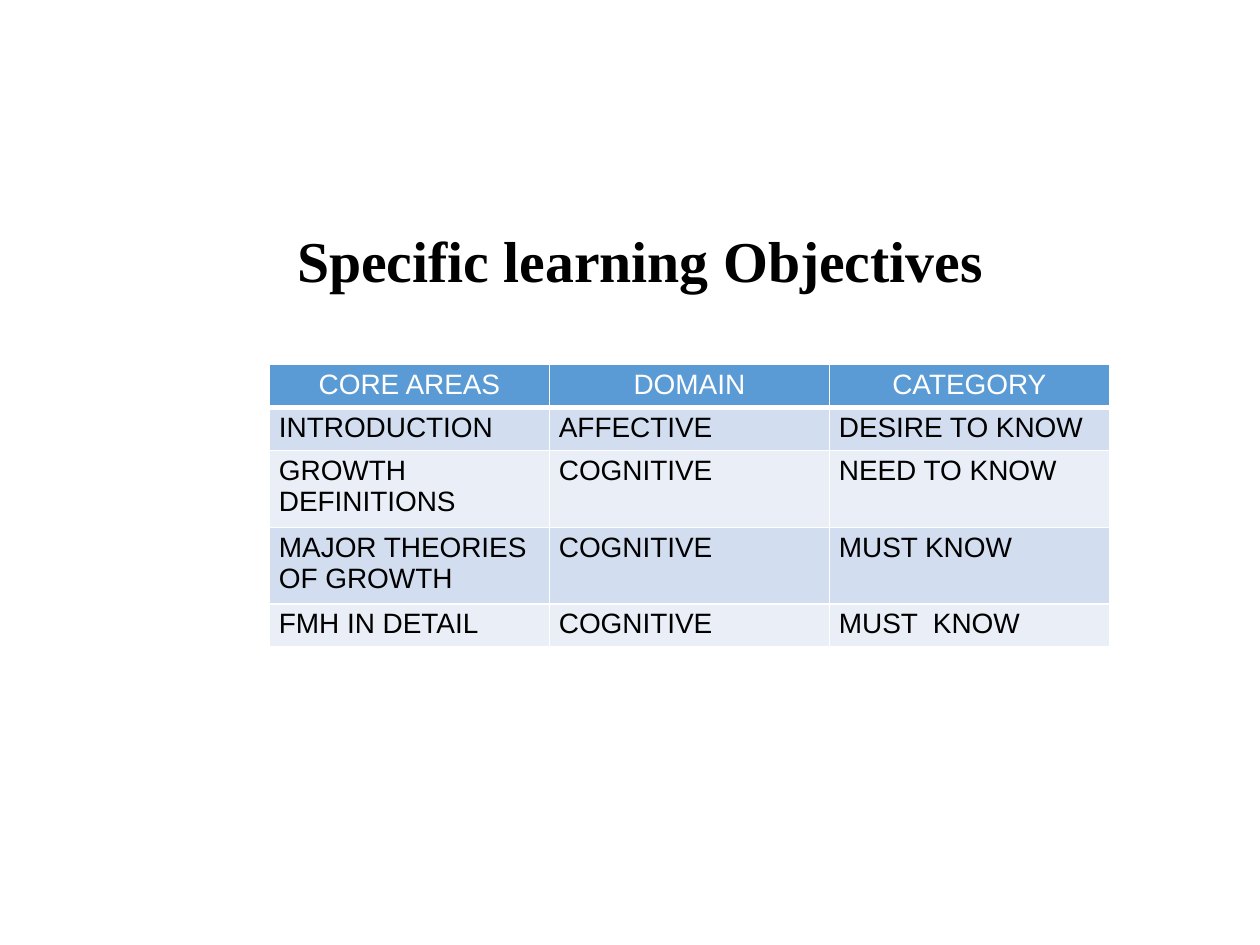
"""Build the slide of specific learning objectives."""
from typing import NamedTuple

from lxml import etree
from pptx import Presentation
from pptx import util as u
from pptx.dml.color import RGBColor
from pptx.enum import text
from pptx.oxml.ns import qn


class Objective(NamedTuple):
    area: str
    domain: str
    category: str


HEADER = Objective("CORE AREAS", "DOMAIN", "CATEGORY")
OBJECTIVES = [
    Objective("INTRODUCTION", "AFFECTIVE", "DESIRE TO KNOW"),
    Objective("GROWTH DEFINITIONS", "COGNITIVE", "NEED TO KNOW"),
    Objective("MAJOR THEORIES OF GROWTH", "COGNITIVE", "MUST KNOW"),
    Objective("FMH IN DETAIL", "COGNITIVE", "MUST  KNOW"),
]
HEADER_FILL, BANDS = "5B9BD5", ("D2DEEF", "EAEFF7")
HEADER_BORDERS = {"a:lnL": 1, "a:lnR": 1, "a:lnT": 1, "a:lnB": 3}
COL_WIDTH, ROW_HEIGHT = 160, 21.6


def rgb(hex_color: str) -> RGBColor:
    return RGBColor.from_string(hex_color)


def style_text(p, font: str, size: float, color: str, bold: bool, centered: bool) -> None:
    p.alignment = text.PP_ALIGN.CENTER if centered else text.PP_ALIGN.LEFT
    for r in p.runs:
        r.font.name, r.font.size, r.font.bold = font, u.Pt(size), bold
        r.font.color.rgb = rgb(color)


def add_title(s, title: str) -> None:
    sp = s.shapes.add_textbox(u.Pt(96.5), u.Pt(114.5), u.Pt(547), u.Pt(72))
    tf = sp.text_frame
    tf.word_wrap = True
    tf.vertical_anchor = text.MSO_ANCHOR.MIDDLE
    tf.text = title
    p = tf.paragraphs[0]
    p.line_spacing = 0.9
    style_text(p, "Times New Roman", 33, "000000", True, True)


def add_header_borders(cell) -> None:
    tc_pr = cell._tc.get_or_add_tcPr()
    for i, (tag, width) in enumerate(HEADER_BORDERS.items()):
        ln = etree.Element(qn(tag), w=str(u.Pt(width)))
        fill = etree.SubElement(ln, qn("a:solidFill"))
        etree.SubElement(fill, qn("a:srgbClr"), val="FFFFFF")
        tc_pr.insert(i, ln)


def fill_cell(cell, value: str, fill: str, is_header: bool) -> None:
    cell.margin_left = cell.margin_right = u.Pt(5.4)
    cell.margin_top = cell.margin_bottom = u.Pt(2.7)
    cell.fill.solid()
    cell.fill.fore_color.rgb = rgb(fill)
    cell.text_frame.text = value
    color = "FFFFFF" if is_header else "000000"
    style_text(cell.text_frame.paragraphs[0], "Arial", 16, color, False, is_header)
    if is_header:
        add_header_borders(cell)


def add_objectives(s, objectives: list[Objective]) -> None:
    rows = [HEADER, *objectives]
    table = s.shapes.add_table(
        len(rows), len(HEADER), u.Pt(154), u.Pt(208.3),
        u.Pt(COL_WIDTH * len(HEADER)), u.Pt(ROW_HEIGHT * len(rows)),
    ).table
    for i, row in enumerate(rows):
        fill = BANDS[(i - 1) % 2] if i else HEADER_FILL
        for j, value in enumerate(row):
            fill_cell(table.cell(i, j), value, fill, i == 0)


def main() -> None:
    prs = Presentation()
    prs.slide_width, prs.slide_height = u.Pt(720), u.Pt(540)
    s = prs.slides.add_slide(prs.slide_layouts[6])
    add_title(s, "Specific learning Objectives ")
    add_objectives(s, OBJECTIVES)
    prs.save("out.pptx")


if __name__ == "__main__":
    main()
